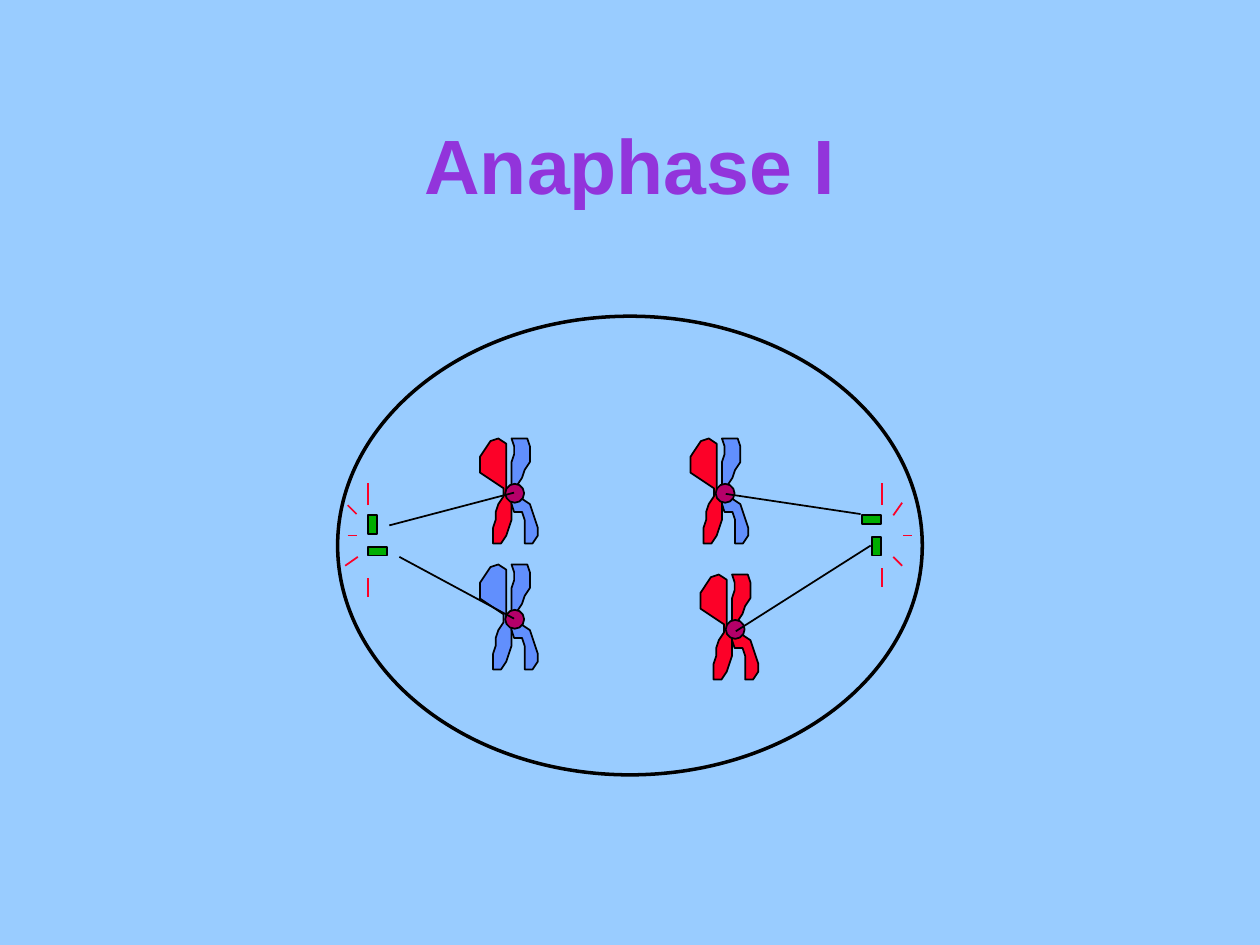
from lxml import etree
from pptx import Presentation
from pptx import util as u
from pptx.dml.color import RGBColor
from pptx.enum import shapes, text
from pptx.oxml.ns import qn

SKY, BLACK, RED, BLUE = "99CCFF", "000000", "FC0128", "618FFD"
GREEN, PLUM, VIOLET = "00AE00", "B50069", "9234DB"


def paint(shape, line=BLACK, width=1, fill=None):
    shape.line.color.rgb = RGBColor.from_string(line)
    shape.line.width = u.Pt(width)
    if fill:
        shape.shadow.inherit = False
        shape.fill.solid()
        shape.fill.fore_color.rgb = RGBColor.from_string(fill)
    else:
        etree.SubElement(shape._element.spPr, qn("a:effectLst"))


def write_text(shape, content, size, color, font="Arial", bold=False):
    frame = shape.text_frame
    frame.word_wrap = True
    frame.vertical_anchor = text.MSO_ANCHOR.MIDDLE
    paragraph = frame.paragraphs[0]
    paragraph.alignment = text.PP_ALIGN.CENTER
    run = paragraph.add_run()
    run.text = content
    run.font.name = font
    run.font.size = u.Pt(size)
    run.font.bold = bold
    run.font.color.rgb = RGBColor.from_string(color)


presentation = Presentation()
presentation.slide_width = u.Inches(10)
presentation.slide_height = u.Inches(7.5)
slide = presentation.slides.add_slide(presentation.slide_layouts[6])
slide.background.fill.solid()
slide.background.fill.fore_color.rgb = RGBColor.from_string(SKY)

title = slide.shapes.add_textbox(u.Inches(0.75), u.Inches(0.67), u.Inches(8.5), u.Inches(1.25))
write_text(title, "Anaphase I", size=44, color=VIOLET, bold=True)

cell = slide.shapes.add_shape(
    shapes.MSO_SHAPE.OVAL, u.Inches(2.68), u.Inches(2.51), u.Inches(4.64), u.Inches(3.64))
paint(cell, width=2, fill=SKY)

centrioles = [
    (6.92, 4.26, 0.07, 0.15),
    (2.92, 4.09, 0.07, 0.15),
    (6.84, 4.09, 0.15, 0.07),
    (2.92, 4.34, 0.15, 0.07),
]
for box in centrioles:
    centriole = slide.shapes.add_shape(shapes.MSO_SHAPE.RECTANGLE, *map(u.Inches, box))
    paint(centriole, fill=GREEN)

left_chromatid = [
    (13, 21), (10, 20), (10, 2), (7, 0), (4, 1), (2, 4), (0, 7), (0, 13),
    (9, 19), (9, 22), (7, 25), (6, 28), (6, 31), (5, 34), (5, 40), (8, 40),
    (10, 37), (11, 34), (12, 31), (12, 22),
]
right_chromatid = [
    (13, 21), (12, 18), (12, 9), (13, 6), (13, 3), (12, 0), (18, 0), (19, 3),
    (19, 9), (17, 12), (16, 15), (14, 18), (13, 21), (19, 25), (20, 28),
    (22, 34), (22, 37), (20, 40), (17, 40), (17, 31), (16, 28), (13, 28),
    (12, 25), (12, 22),
]
chromosomes = [
    (3.81, 4.48, BLUE, BLUE),
    (5.48, 3.48, RED, BLUE),
    (3.81, 3.48, RED, BLUE),
    (5.56, 4.56, RED, RED),
]
for left, top, left_color, right_color in chromosomes:
    for outline, color in ((left_chromatid, left_color), (right_chromatid, right_color)):
        builder = slide.shapes.build_freeform(*outline[0], scale=u.Inches(1) / 48)
        builder.add_line_segments(outline[1:], close=True)
        chromatid = builder.convert_to_shape(u.Inches(left), u.Inches(top))
        paint(chromatid, fill=color)
    centromere = slide.shapes.add_shape(
        shapes.MSO_SHAPE.OVAL, u.Inches(left + 0.2), u.Inches(top + 0.36),
        u.Inches(0.15), u.Inches(0.15))
    paint(centromere, fill=PLUM)

aster_rays = [
    (2.84, 4.42, 2.74, 4.49),
    (2.76, 4.25, 2.83, 4.25),
    (2.76, 4.01, 2.83, 4.08),
    (2.92, 4.01, 2.92, 3.83),
    (2.92, 4.59, 2.92, 4.74),
    (7, 4.01, 7, 3.83),
    (7.09, 4.09, 7.16, 3.99),
    (7.17, 4.25, 7.24, 4.25),
    (7.09, 4.42, 7.16, 4.49),
    (7, 4.51, 7, 4.66),
]
spindle_fibers = [
    (3.09, 4.17, 4.08, 3.91),
    (3.17, 4.42, 4.08, 4.91),
    (5.76, 3.92, 6.83, 4.08),
    (5.84, 5.01, 6.91, 4.33),
]
for segments, color in ((aster_rays, RED), (spindle_fibers, BLACK)):
    for ends in segments:
        connector = slide.shapes.add_connector(
            shapes.MSO_CONNECTOR.STRAIGHT, *map(u.Inches, ends))
        paint(connector, line=color)

presentation.save("out.pptx")
